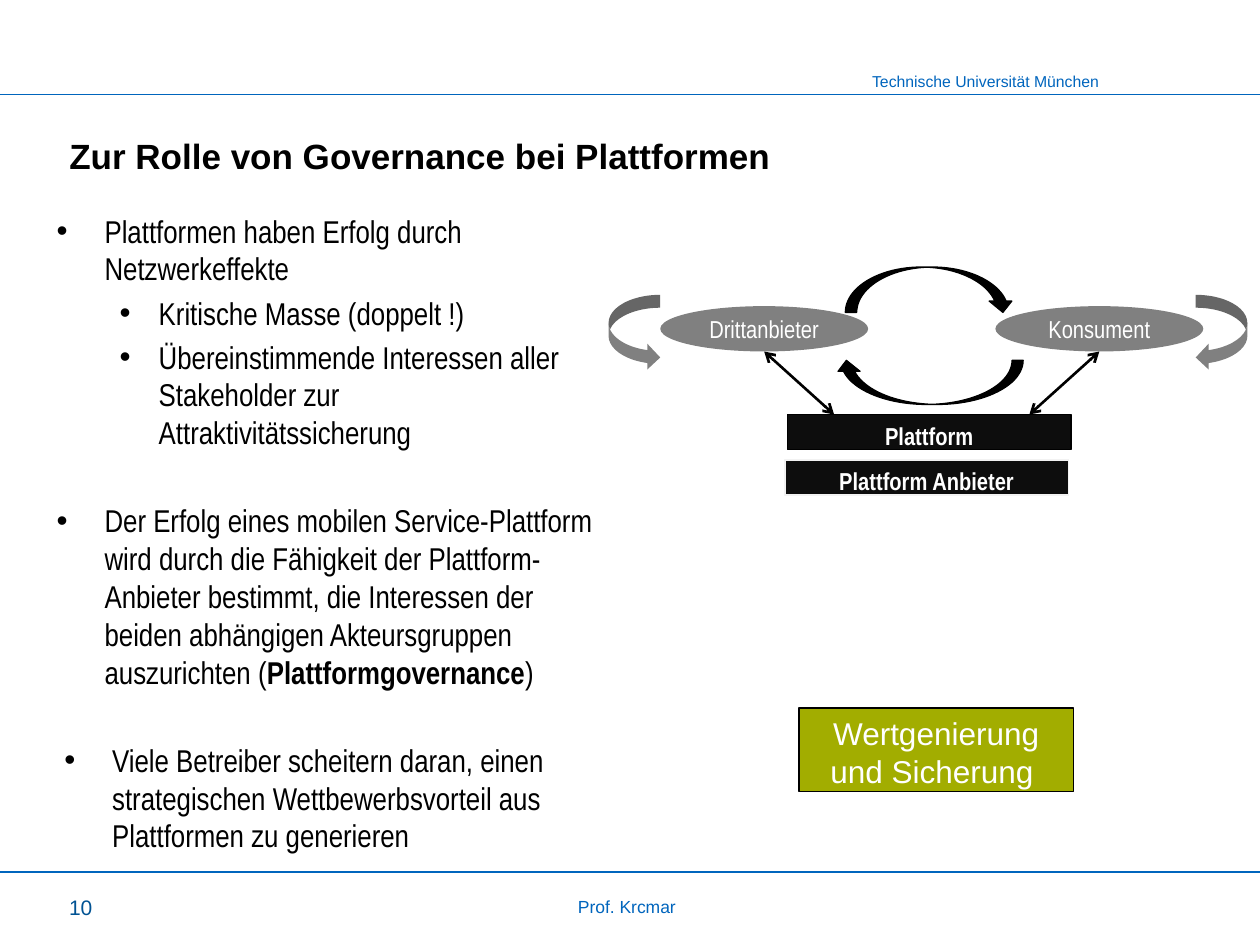
from collections import namedtuple
from lxml.etree import SubElement
from pptx import Presentation
from pptx.dml.color import RGBColor
from pptx.enum.shapes import MSO_CONNECTOR as Connector, MSO_SHAPE as Shape
from pptx.enum.text import MSO_ANCHOR as Anchor, MSO_AUTO_SIZE as AutoSize, PP_ALIGN as Align
from pptx.oxml.ns import qn
from pptx.util import Inches, Pt

Box = namedtuple("Box", "left top width height")

BLUE, DARK_BLUE = "0065BD", "005293"
BLACK, NEAR_BLACK, WHITE = "000000", "0D0D0D", "FFFFFF"
GREY, PALE_GREY, GREEN = "808080", "F2F2F2", "A2AD00"

NARROW = {"name": "Arial Narrow", "size": Pt(14), "bold": False}
NARROW_BOLD = NARROW | {"bold": True}
BODY_FONT = NARROW | {"size": Pt(18)}
TITLE_FONT = {"name": "Arial", "size": Pt(20), "bold": True}

# Level, left indent, hanging indent, space before, spans as (text, bold)
POINTS = [
    (0, 0.38, 0.38, 0, [("Plattformen haben Erfolg durch Netzwerkeffekte", False)]),
    (1, 0.81, 0.31, 3.6, [("Kritische Masse (doppelt !)", False)]),
    (1, 0.81, 0.31, 3.6, [("Übereinstimmende Interessen aller Stakeholder zur "
                           "Attraktivitätssicherung", False)]),
    (0, 0.38, 0.38, 28.8, [("Der Erfolg eines mobilen Service-Plattform wird durch die Fähigkeit "
                            "der Plattform-Anbieter bestimmt, die Interessen der beiden "
                            "abhängigen Akteursgruppen auszurichten (", False),
                           ("Plattformgovernance", True), (")", False)]),
    (0, 0.44, 0.38, 28.8, [("Viele Betreiber scheitern daran, einen strategischen "
                            "Wettbewerbsvorteil aus Plattformen zu generieren", False)]),
]


def rgb(value):
    return RGBColor.from_string(value)


def set_font(font, values, color):
    for name, value in values.items():
        setattr(font, name, value)
    font.color.rgb = rgb(color)


def place(item, box):
    for name, value in box._asdict().items():
        setattr(item, name, Inches(value))


def add_label(page, box, text, size, color, align):
    label = page.shapes.add_textbox(*map(Inches, box))
    label.text_frame.word_wrap = False
    para = label.text_frame.paragraphs[0]
    para.text = text
    para.alignment = align
    set_font(para.font, {"name": "Arial", "size": Pt(size)}, color)


def add_figure(page, kind, box, fill, line=None, width=0.75, flip=None):
    figure = page.shapes.add_shape(kind, *map(Inches, box))
    figure.shadow.inherit = False
    figure.fill.solid()
    figure.fill.fore_color.rgb = rgb(fill)
    if line:
        figure.line.color.rgb = rgb(line)
        figure.line.width = Pt(width)
    else:
        figure.line.fill.background()
    if flip:
        figure._element.spPr.xfrm.set(flip, "1")
    return figure


def write_centred(figure, text, font, anchor=Anchor.TOP):
    frame = figure.text_frame
    frame.word_wrap = True
    frame.vertical_anchor = anchor
    para = frame.paragraphs[0]
    para.text = text
    para.alignment = Align.CENTER
    set_font(para.font, font, WHITE)


def add_line(page, start, end, color, width, arrows=False):
    line = page.shapes.add_connector(Connector.STRAIGHT, *map(Inches, (*start, *end)))
    line.line.color.rgb = rgb(color)
    line.line.width = Pt(width)
    if arrows:
        outline = line.line._get_or_add_ln()
        for tag in ("a:headEnd", "a:tailEnd"):
            SubElement(outline, qn(tag), type="arrow")
    SubElement(line._element.spPr, qn("a:effectLst"))


def add_frame(page, box):
    """Header and footer rules with their labels."""
    right = box.left + box.width
    for y in (box.top, box.top + box.height):
        add_line(page, (box.left, y), (right, y), BLUE, 0.75)
    bottom = box.top + box.height
    add_label(page, Box(right - 3.19, box.top - 0.23, 2.01, 0.25),
              "Technische Universität München", 9, BLUE, Align.RIGHT)
    add_label(page, Box(box.left + 0.45, bottom + 0.13, 0.53, 0.3),
              "10", 12, DARK_BLUE, Align.LEFT)
    add_label(page, Box(box.left + 4.48, bottom + 0.14, 0.99, 0.27),
              "Prof. Krcmar", 10, BLUE, Align.CENTER)


def fill_title(page, box):
    title = page.shapes.title
    place(title, box)
    frame = title.text_frame
    frame.auto_size = AutoSize.NONE
    frame.vertical_anchor = Anchor.MIDDLE
    frame.margin_left = 0
    para = frame.paragraphs[0]
    para.text = "Zur Rolle von Governance bei Plattformen"
    para.alignment = Align.LEFT
    set_font(para.font, TITLE_FONT, BLACK)


def fill_points(page, box):
    body = page.placeholders[1]
    place(body, box)
    frame = body.text_frame
    frame.auto_size = AutoSize.NONE
    for index, (level, indent, hanging, before, spans) in enumerate(POINTS):
        para = frame.add_paragraph() if index else frame.paragraphs[0]
        para.level = level
        para.space_before = Pt(before)
        props = para._p.get_or_add_pPr()
        props.set("marL", str(Inches(indent)))
        props.set("indent", str(-Inches(hanging)))
        SubElement(props, qn("a:buFont"), typeface="Arial")
        SubElement(props, qn("a:buChar"), char="•")
        for text, bold in spans:
            span = para.add_run()
            span.text = text
            set_font(span.font, BODY_FONT | {"bold": bold}, BLACK)


def add_platform_diagram(page, box):
    """Two actor groups, their network effects and the platform below."""
    def inside(x, y, width, height):
        return Box(box.left + x, box.top + y, width, height)

    # Platform and its provider
    for x, y, text, line, width in ((1.42, 1.17, "Plattform", BLACK, 0.75),
                                    (1.4, 1.53, "Plattform Anbieter", PALE_GREY, 1)):
        bar = add_figure(page, Shape.RECTANGLE, inside(x, y, 2.25, 0.28),
                         NEAR_BLACK, line, width)
        write_centred(bar, text, NARROW_BOLD)

    # Actors, each with a self-loop and a link to the platform
    for x, text, loop_x, flip, link_x in ((0.41, "Drittanbieter", 0, None, 1.79),
                                          (3.07, "Konsument", 4.66, "flipH", 3.34)):
        actor = inside(x, 0.31, 1.65, 0.36)
        ellipse = add_figure(page, Shape.OVAL, actor, GREY)
        write_centred(ellipse, text, NARROW, Anchor.MIDDLE)
        add_figure(page, Shape.CURVED_RIGHT_ARROW, inside(loop_x, 0.22, 0.41, 0.6),
                   GREY, flip=flip)
        add_line(page, (actor.left + actor.width / 2, actor.top + actor.height),
                 (box.left + link_x, box.top + 1.17), BLACK, 1.5, arrows=True)

    # Mutual reinforcement between the actors
    for cycle, flip in ((inside(1.8, 0.74, 1.49, 0.35), "flipH"),
                        (inside(1.88, 0, 1.34, 0.36), "flipV")):
        add_figure(page, Shape.CURVED_UP_ARROW, cycle, BLACK, BLACK, flip=flip)


def add_value_box(page, box):
    value = add_figure(page, Shape.RECTANGLE, box, GREEN, BLACK)
    write_centred(value, "Wertgenierung und Sicherung ", {"name": "Arial", "size": Pt(18)})


def main():
    deck = Presentation()
    deck.slide_width, deck.slide_height = Inches(10), Inches(7.5)
    page = deck.slides.add_slide(deck.slide_layouts[1])
    add_frame(page, Box(0, 0.75, 10, 6.17))
    fill_title(page, Box(0.55, 1.02, 9.93, 0.43))
    add_platform_diagram(page, Box(4.83, 2.12, 5.07, 1.81))
    fill_points(page, Box(0.35, 1.63, 4.48, 4.48))
    add_value_box(page, Box(6.34, 5.62, 2.18, 0.66))
    deck.save("out.pptx")


if __name__ == "__main__":
    main()
